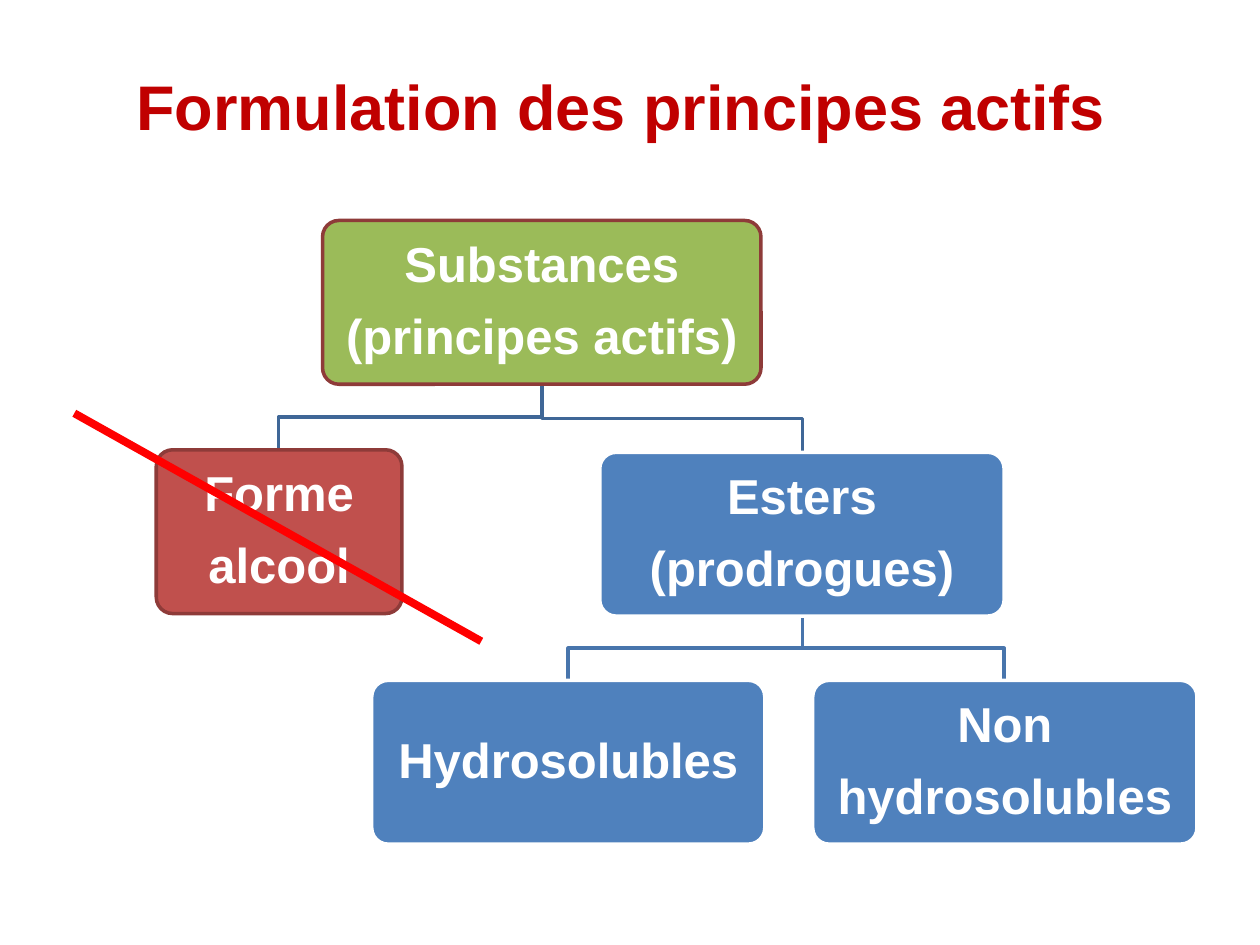
"""Builds the slide on the formulation of active substances as a tree."""
from lxml import etree
from pptx import Presentation
from pptx import util as u
from pptx.dml import color
from pptx.enum import shapes, text
from pptx.oxml import ns

IN = u.Inches


def rgb(value):
    return color.RGBColor.from_string(value)


def apply(target, values):
    for name, value in values.items():
        setattr(target, name, value)


class TreeSlide:
    font = {"name": "Arial", "bold": True}
    frame = {"word_wrap": True, "vertical_anchor": text.MSO_ANCHOR.MIDDLE}
    margins = dict.fromkeys(
        ("margin_left", "margin_right", "margin_top", "margin_bottom"), IN(0.12))
    paragraph = {"alignment": text.PP_ALIGN.CENTER, "line_spacing": 0.9,
                 "space_after": u.Pt(11)}
    node_height = 1.3

    def __init__(self, deck):
        self.slide = deck.slides.add_slide(deck.slide_layouts[5])

    def label(self, paragraph, wording, size, ink):
        run = paragraph.add_run()
        run.text = wording
        apply(run.font, {**self.font, "size": u.Pt(size)})
        run.font.color.rgb = rgb(ink)

    def outline(self, line, ink, width):
        line.color.rgb = rgb(ink)
        line.width = u.Pt(width)

    def title(self, wording):
        heading = self.slide.shapes.title
        apply(heading, {"left": IN(0.43), "top": IN(0.21),
                        "width": IN(9), "height": IN(1.25)})
        apply(heading.text_frame, self.frame)
        paragraph = heading.text_frame.paragraphs[0]
        paragraph.alignment = text.PP_ALIGN.CENTER
        self.label(paragraph, wording, 36, "C00000")

    def node(self, left, top, width, lines, fill, edge):
        box = self.slide.shapes.add_shape(
            shapes.MSO_SHAPE.ROUNDED_RECTANGLE,
            IN(left), IN(top), IN(width), IN(self.node_height))
        box.shadow.inherit = False
        box.adjustments[0] = 0.1
        box.fill.solid()
        box.fill.fore_color.rgb = rgb(fill)
        self.outline(box.line, edge, 2)
        frame = box.text_frame
        apply(frame, {**self.frame, **self.margins})
        for index, wording in enumerate(lines):
            paragraph = frame.add_paragraph() if index else frame.paragraphs[0]
            apply(paragraph, self.paragraph)
            self.label(paragraph, wording, 28, "FFFFFF")

    def branch(self, start, end, ink):
        (x1, y1), (x2, y2) = start, end
        middle = (y1 + y2) / 2
        builder = self.slide.shapes.build_freeform(IN(x1), IN(y1))
        builder.add_line_segments(
            [(IN(x), IN(y)) for x, y in ((x1, middle), (x2, middle), (x2, y2))],
            close=False)
        elbow = builder.convert_to_shape()
        elbow.shadow.inherit = False
        elbow.fill.background()
        self.outline(elbow.line, ink, 2)

    def strike(self, start, end):
        stroke = self.slide.shapes.add_connector(
            shapes.MSO_CONNECTOR.STRAIGHT, *map(IN, start + end))
        self.outline(stroke.line, "FF0000", 4.5)
        etree.SubElement(stroke._element.spPr, ns.qn("a:effectLst"))


def main():
    deck = Presentation()
    deck.slide_width, deck.slide_height = IN(10), IN(7.5)
    tree = TreeSlide(deck)
    tree.title("Formulation des principes actifs")

    substances, esters = (4.3, 3.05), (6.37, 4.89)
    for start, end, ink in (
            (substances, (2.21, 3.57), "3F6797"),
            (substances, (6.37, 3.59), "3F6797"),
            (esters, (4.51, 5.4), "4875AC"),
            (esters, (7.97, 5.4), "4875AC")):
        tree.branch(start, end, ink)

    dark, blue, white = "8E3B39", "4F81BD", "FFFFFF"
    for node in (
            (2.56, 1.75, 3.48, ("Substances", "(principes actifs)"), "9BBB59", dark),
            (1.24, 3.57, 1.95, ("Forme", "alcool"), "C0504D", dark),
            (4.76, 3.59, 3.21, ("Esters", "(prodrogues)"), blue, white),
            (2.95, 5.4, 3.12, ("Hydrosolubles",), blue, white),
            (6.45, 5.4, 3.05, ("Non", "hydrosolubles"), blue, white)):
        tree.node(*node)

    tree.strike((0.59, 3.28), (3.82, 5.09))
    deck.save("out.pptx")


if __name__ == "__main__":
    main()
